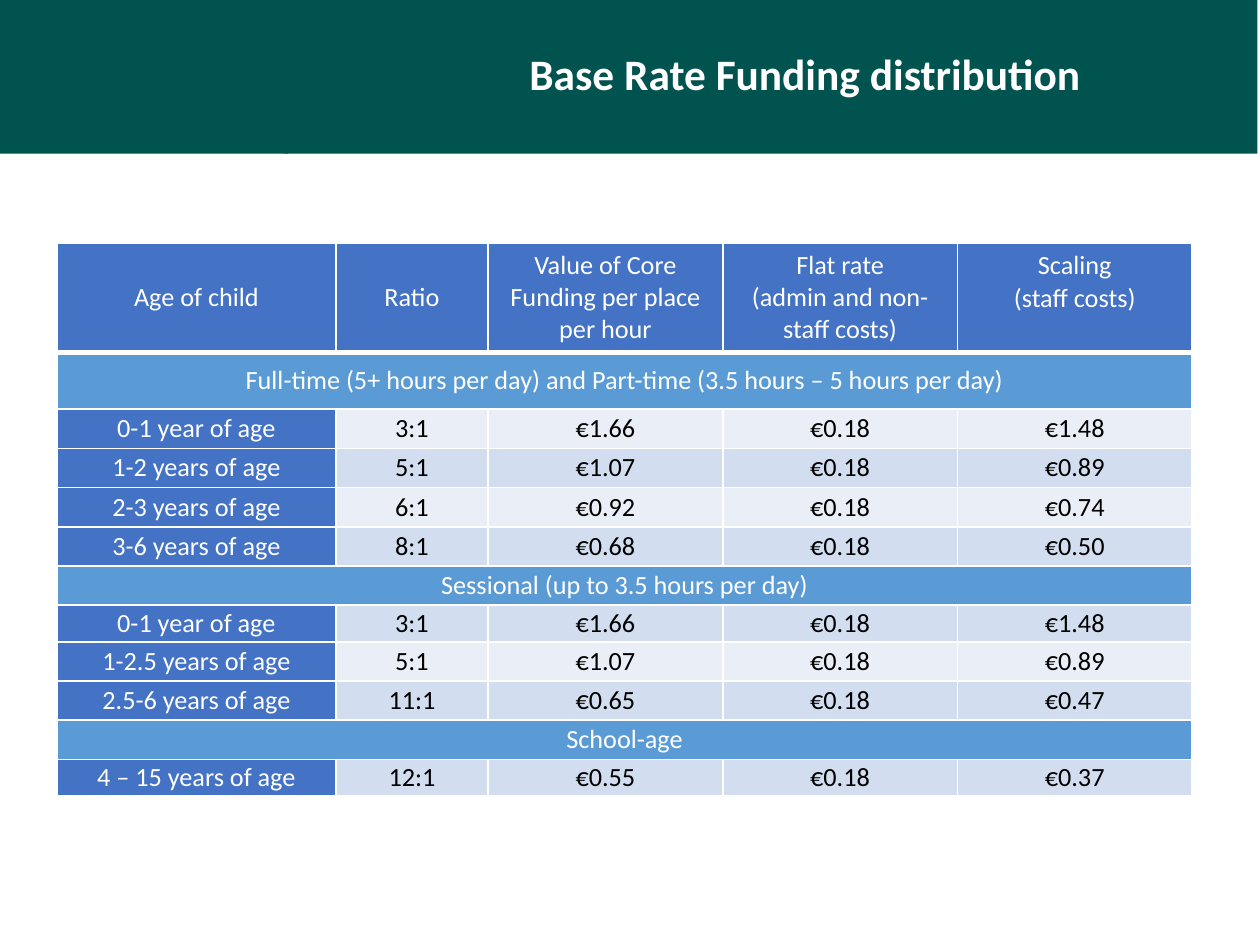
from lxml.etree import SubElement
from pptx import Presentation
from pptx.dml.color import RGBColor
from pptx.enum.shapes import MSO_SHAPE
from pptx.enum.text import MSO_ANCHOR, PP_ALIGN
from pptx.oxml.ns import qn
from pptx.util import Cm, Pt

COLORS = {
    "green": "00534F", "blue": "4472C4", "sky": "5B9BD5",
    "light": "EAEFF7", "mid": "D2DEEF", "white": "FFFFFF", "black": "000000",
}
ROWS = [
    ["Age of child", "Ratio", "Value of Core Funding per place per hour",
     "Flat rate\n(admin and non-staff costs)", "Scaling\n(staff costs)"],
    ["Full-time (5+ hours per day) and Part-time (3.5 hours – 5 hours per day)"],
    ["0-1 year of age", "3:1", "€1.66", "€0.18", "€1.48"],
    ["1-2 years of age", "5:1", "€1.07", "€0.18", "€0.89"],
    ["2-3 years of age", "6:1", "€0.92", "€0.18", "€0.74"],
    ["3-6 years of age", "8:1", "€0.68", "€0.18", "€0.50"],
    ["Sessional (up to 3.5 hours per day)"],
    ["0-1 year of age", "3:1", "€1.66", "€0.18", "€1.48"],
    ["1-2.5 years of age", "5:1", "€1.07", "€0.18", "€0.89"],
    ["2.5-6 years of age", "11:1", "€0.65", "€0.18", "€0.47"],
    ["School-age"],
    ["4 – 15 years of age", "12:1", "€0.55", "€0.18", "€0.37"],
]
WIDTHS = [5.62, 3.07, 4.73, 4.73, 4.73]
HEIGHTS = [2.21, 1.14] + [0.79] * 5 + [0.74] + [0.79] * 3 + [0.74]


def paint(fill, name):
    fill.solid()
    fill.fore_color.rgb = RGBColor.from_string(COLORS[name])


def border(cell, row):
    """Draw white cell edges, with a thick rule under the header row."""
    props = cell._tc.get_or_add_tcPr()
    thick = {0: "lnB", 1: "lnT"}.get(row)
    for spot, side in enumerate(["lnL", "lnR", "lnT", "lnB"]):
        line = SubElement(props, qn("a:" + side), w=str(Pt(3 if side == thick else 1)))
        fill = SubElement(line, qn("a:solidFill"))
        SubElement(fill, qn("a:srgbClr"), val=COLORS["white"])
        props.insert(spot, line)


deck = Presentation()
deck.slide_width, deck.slide_height = Cm(25.4), Cm(19.05)
slide = deck.slides.add_slide(deck.slide_layouts[6])

# Header band and title
for left, width in [(0, 5.8), (5.74, 19.61)]:
    band = slide.shapes.add_shape(
        MSO_SHAPE.RECTANGLE, Cm(left), 0, Cm(width), Cm(3.1))
    band.shadow.inherit = False
    paint(band.fill, "green")
    band.line.fill.background()

frame = band.text_frame
frame.word_wrap = True
frame.vertical_anchor = MSO_ANCHOR.MIDDLE
frame.margin_left = Cm(1.63)
title = frame.paragraphs[0]
title.text = "Base Rate Funding distribution"
title.alignment = PP_ALIGN.CENTER
title.line_spacing = 0.9
title.font.name = "Calibri"
title.font.size = Pt(24.8)
title.font.bold = True
title.font.color.rgb = RGBColor.from_string(COLORS["white"])

# Funding table
table = slide.shapes.add_table(
    len(ROWS), len(WIDTHS), Cm(1.15), Cm(4.9),
    Cm(sum(WIDTHS)), Cm(sum(HEIGHTS))).table
table.first_row = table.horz_banding = False
for col, width in zip(table.columns, WIDTHS):
    col.width = Cm(width)
for row, height in zip(table.rows, HEIGHTS):
    row.height = Cm(height)

for r, texts in enumerate(ROWS):
    whole = len(texts) == 1
    if whole:
        table.cell(r, 0).merge(table.cell(r, len(WIDTHS) - 1))
    for c in range(len(WIDTHS)):
        cell = table.cell(r, c)
        if whole:
            shade = "sky"
        elif r == 0 or c == 0:
            shade = "blue"
        else:
            shade = "mid" if r % 2 else "light"
        paint(cell.fill, shade)
        border(cell, r)
        if c >= len(texts):
            continue
        cell.text = texts[c]
        cell.vertical_anchor = MSO_ANCHOR.MIDDLE
        cell.margin_left = cell.margin_right = Cm(0.15)
        cell.margin_top = cell.margin_bottom = 0
        ink = "white" if shade in ("blue", "sky") else "black"
        for para in cell.text_frame.paragraphs:
            para.alignment = PP_ALIGN.CENTER
            para.font.name = "Calibri"
            para.font.size = Pt(15)
            para.font.color.rgb = RGBColor.from_string(COLORS[ink])

# The last heading sits one line higher than the middle
table.cell(0, 4).margin_bottom = Cm(0.64)

deck.save("out.pptx")
